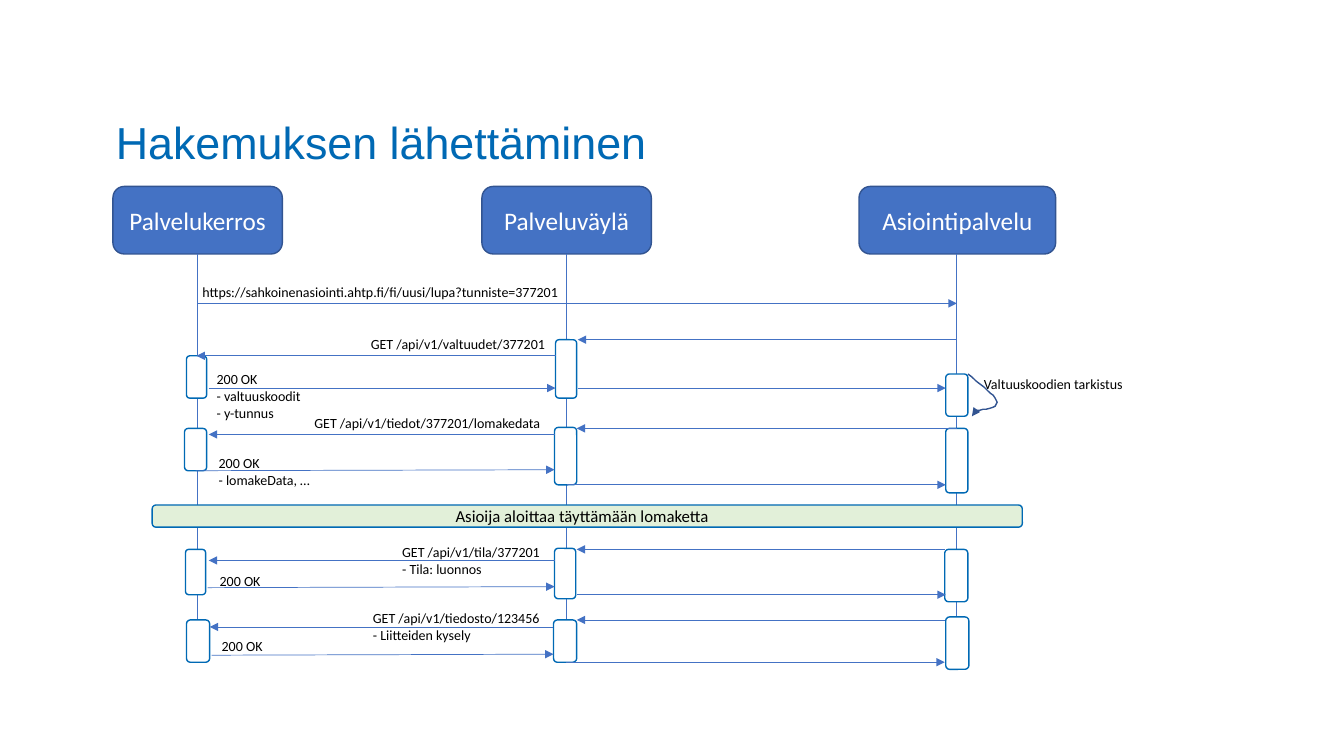
from lxml import etree
from pptx import Presentation
from pptx.dml.color import RGBColor
from pptx.enum.shapes import MSO_CONNECTOR, MSO_SHAPE
from pptx.enum.text import MSO_ANCHOR, PP_ALIGN
from pptx.oxml.ns import qn
from pptx.util import Pt

PX = 9144  # one hundredth of an inch
STRAIGHT = MSO_CONNECTOR.STRAIGHT
ROUNDED = MSO_SHAPE.ROUNDED_RECTANGLE
MIDDLE, TOP = MSO_ANCHOR.MIDDLE, MSO_ANCHOR.TOP
CENTER, LEFT = PP_ALIGN.CENTER, PP_ALIGN.LEFT

WHITE = RGBColor(0xFF, 0xFF, 0xFF)
BLACK = RGBColor(0x00, 0x00, 0x00)
BLUE = RGBColor(0x44, 0x72, 0xC4)
DARK_BLUE = RGBColor(0x32, 0x54, 0x91)
TITLE_BLUE = RGBColor(0x00, 0x69, 0xB4)
PALE_GREEN = RGBColor(0xE2, 0xF0, 0xD9)

# Participants: name, left, width, lifeline x
PARTICIPANTS = [
    ("Palvelukerros", 112, 168, 196),
    ("Palveluväylä", 478, 168, 562),
    ("Asiointipalvelu", 852, 195, 949),
]

# Activation bars: left, top, width, height
ACTIVATIONS = [
    (185, 353, 20, 42), (551, 337, 21, 58), (938, 371, 22, 42),
    (183, 425, 22, 42), (550, 424, 22, 57), (938, 425, 22, 64),
    (184, 545, 20, 45), (550, 544, 21, 50), (937, 545, 23, 52),
    (185, 615, 23, 42), (549, 615, 23, 42), (938, 612, 23, 52),
]

# Messages: start x, start y, end x, end y
MESSAGES = [
    (196, 301, 949, 301),
    (949, 337, 573, 337), (551, 353, 195, 353),
    (207, 385, 551, 385), (573, 385, 938, 385),
    (949, 425, 572, 425), (550, 431, 207, 431),
    (194, 467, 550, 466), (562, 481, 938, 481),
    (937, 545, 572, 545), (550, 556, 207, 556),
    (206, 583, 550, 582), (572, 590, 938, 590),
    (937, 615, 572, 615), (548, 622, 208, 622),
    (210, 650, 549, 649), (561, 657, 937, 657),
]

# Labels: left, top, width, height, paragraphs
LABELS = [
    (191, 276, 379, 27, ["https://sahkoinenasiointi.ahtp.fi/fi/uusi/lupa?tunniste=377201"]),
    (358, 328, 196, 27, ["GET /api/v1/valtuudet/377201"]),
    (205, 363, 105, 61, ["200 OK\n- valtuuskoodit", "- y-tunnus"]),
    (966, 368, 161, 27, ["Valtuuskoodien tarkistus"]),
    (302, 406, 249, 27, ["GET /api/v1/tiedot/377201/lomakedata"]),
    (207, 446, 112, 44, ["200 OK\n- lomakeData, …"]),
    (389, 534, 159, 44, ["GET /api/v1/tila/377201", "- Tila: luonnos"]),
    (208, 563, 62, 27, ["200 OK"]),
    (360, 600, 188, 44, ["GET /api/v1/tiedosto/123456", "- Liitteiden kysely"]),
    (210, 628, 62, 27, ["200 OK"]),
]

# Self-call loop: cubic segments as start, control, control, end
LOOP = [
    [(960, 371), (974, 382), (988, 393), (989, 399)],
    [(989, 399), (989, 406), (969, 407), (965, 408)],
]
LOOP_TIP = (964, 413)


def write(frame, paragraphs, size=10, color=BLACK, font="Calibri",
          align=LEFT, anchor=TOP, wrap=True, spacing=None):
    frame.word_wrap = wrap
    frame.vertical_anchor = anchor
    for index, text in enumerate(paragraphs):
        paragraph = frame.add_paragraph() if index else frame.paragraphs[0]
        paragraph.text = text
        paragraph.alignment = align
        paragraph.line_spacing = spacing
        for run in paragraph.runs:
            run.font.name = font
            run.font.size = Pt(size)
            run.font.color.rgb = color


def curve_points(segment, steps=10):
    for step in range(1, steps + 1):
        t = step / steps
        weights = ((1 - t) ** 3, 3 * t * (1 - t) ** 2, 3 * t * t * (1 - t), t ** 3)
        yield tuple(sum(w * point[axis] for w, point in zip(weights, segment))
                    for axis in (0, 1))


class SequenceSlide:
    def __init__(self, presentation):
        self.slide = presentation.slides.add_slide(presentation.slide_layouts[6])
        self.shapes = self.slide.shapes

    def box(self, left, top, width, height, fill=WHITE, line=TITLE_BLUE):
        shape = self.shapes.add_shape(ROUNDED, left * PX, top * PX, width * PX, height * PX)
        shape.shadow.inherit = False
        shape.fill.solid()
        shape.fill.fore_color.rgb = fill
        shape.line.color.rgb = line
        shape.line.width = Pt(1)
        return shape

    def text(self, left, top, width, height, paragraphs, **style):
        box = self.shapes.add_textbox(left * PX, top * PX, width * PX, height * PX)
        write(box.text_frame, paragraphs, **style)
        return box

    def line(self, x1, y1, x2, y2, arrow=False):
        connector = self.shapes.add_connector(STRAIGHT, x1 * PX, y1 * PX, x2 * PX, y2 * PX)
        connector.line.color.rgb = BLUE
        connector.line.width = Pt(0.5)
        if arrow:
            self.arrowhead(connector)
        etree.SubElement(connector._element.spPr, qn("a:effectLst"))

    def loop(self, segments, tip):
        builder = self.shapes.build_freeform(*segments[0][0], scale=PX)
        points = [point for segment in segments for point in curve_points(segment)]
        builder.add_line_segments(points + [tip], close=False)
        shape = builder.convert_to_shape()
        shape.shadow.inherit = False
        shape.fill.background()
        shape.line.color.rgb = DARK_BLUE
        shape.line.width = Pt(1)
        self.arrowhead(shape)

    def arrowhead(self, shape):
        etree.SubElement(shape.line._get_or_add_ln(), qn("a:tailEnd"), type="triangle")


def main():
    presentation = Presentation()
    presentation.slide_width = 1333 * PX
    presentation.slide_height = 750 * PX
    diagram = SequenceSlide(presentation)

    # Title
    title = diagram.text(105, 93, 1000, 101, ["Hakemuksen lähettäminen"], size=32,
                         color=TITLE_BLUE, font="Arial", anchor=MIDDLE, spacing=0.9)
    title.fill.solid()
    title.fill.fore_color.rgb = WHITE

    # Participants and lifelines
    for name, left, width, lifeline in PARTICIPANTS:
        head = diagram.box(left, 185, width, 67, fill=BLUE, line=DARK_BLUE)
        write(head.text_frame, [name], size=18, color=WHITE, align=CENTER, anchor=MIDDLE)
        diagram.line(lifeline, 252, lifeline, 649)

    # Activations, messages and labels
    for activation in ACTIVATIONS:
        diagram.box(*activation)
    for message in MESSAGES:
        diagram.line(*message, arrow=True)
    diagram.loop(LOOP, LOOP_TIP)
    for label in LABELS:
        diagram.text(*label, wrap=False)

    # Phase band
    diagram.box(151, 501, 863, 22, fill=PALE_GREEN)
    diagram.text(442, 497, 287, 30, ["Asioija aloittaa täyttämään lomaketta"], size=12)

    presentation.save("out.pptx")


if __name__ == "__main__":
    main()
